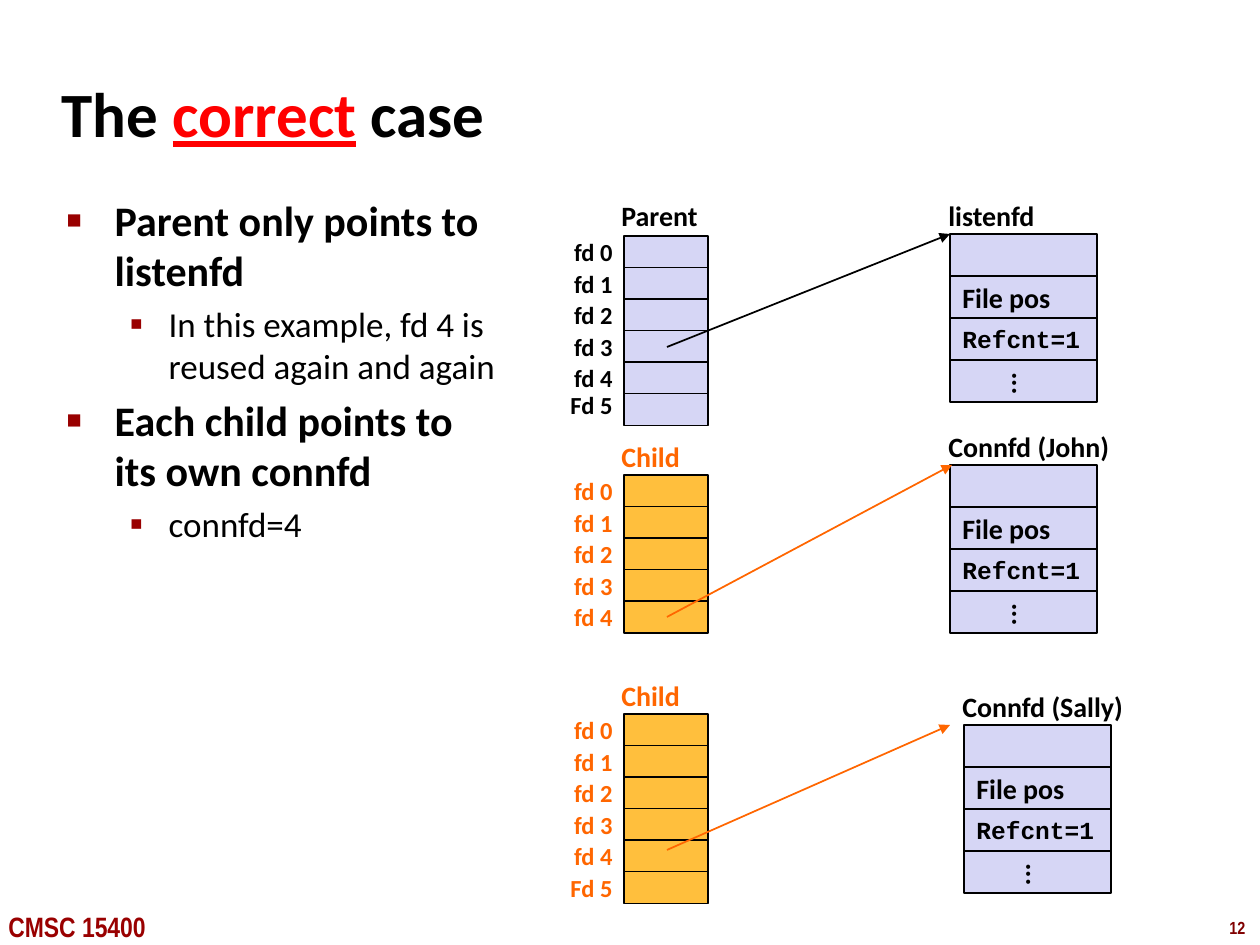
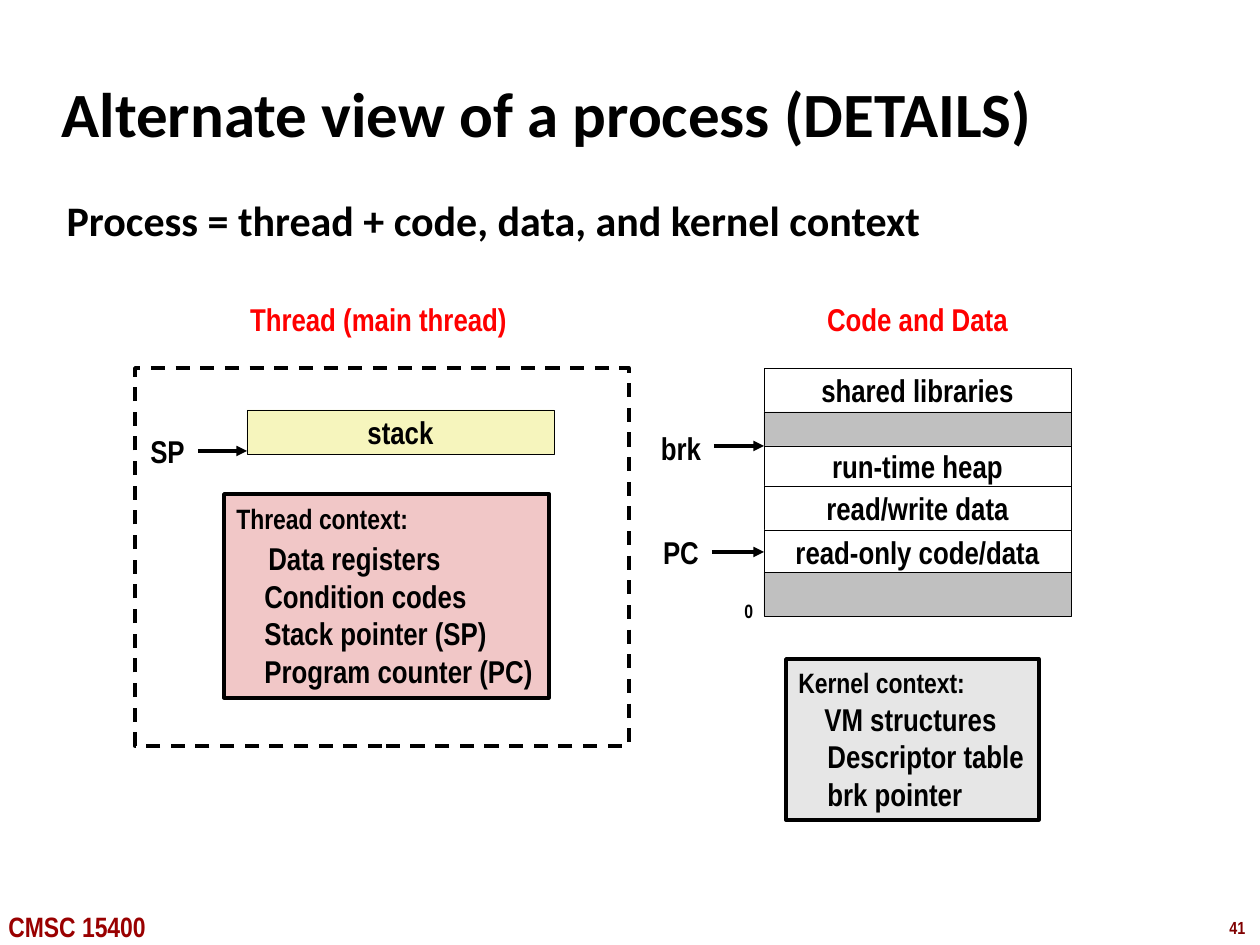
from lxml import etree
from pptx import Presentation
from pptx.dml.color import RGBColor
from pptx.enum.dml import MSO_LINE
from pptx.enum.shapes import MSO_CONNECTOR, MSO_SHAPE
from pptx.enum.text import MSO_ANCHOR, MSO_AUTO_SIZE, PP_ALIGN
from pptx.oxml.ns import qn
from pptx.util import Pt

LEFT, MID, RIGHT = PP_ALIGN.LEFT, PP_ALIGN.CENTER, PP_ALIGN.RIGHT
TOP, CENTER = MSO_ANCHOR.TOP, MSO_ANCHOR.MIDDLE
RECT, DASH = MSO_SHAPE.RECTANGLE, MSO_LINE.DASH
STRAIGHT, FIXED = MSO_CONNECTOR.STRAIGHT, MSO_AUTO_SIZE.NONE
PX = 914400 / 126
SANS, THIN, MONO = "Calibri", "Arial Narrow", "Courier New"
BLACK, RED, DARK, MAROON = "000000", "FF0000", "990000", "800000"
LILAC, AMBER, ORANGE = "D6D6F5", "FFBF3D", "FF6600"
WHITE, GRAY, CREAM, PINK, PALE = "FFFFFF", "C0C0C0", "F6F5BD", "F1C7C7", "E6E6E6"
paint = RGBColor.from_string


def box(slide, area, rows=(), font=SANS, color=BLACK, align=LEFT,
        anchor=CENTER, fill=None, width=0):
    spot = [round(n * PX) for n in area]
    if fill or width:
        shape = slide.shapes.add_shape(RECT, *spot)
        shape.shadow.inherit = False
        shape.line.color.rgb = paint(BLACK)
        shape.line.width = Pt(width)
        if fill:
            shape.fill.solid()
            shape.fill.fore_color.rgb = paint(fill)
        else:
            shape.fill.background()
    else:
        shape = slide.shapes.add_textbox(*spot)
    frame = shape.text_frame
    frame.word_wrap = False
    frame.vertical_anchor = anchor
    for i, (text, size, indent, gap) in enumerate(rows):
        para = frame.add_paragraph() if i else frame.paragraphs[0]
        para.alignment = align
        para.space_before = Pt(gap)
        para._p.get_or_add_pPr().set("marL", str(round(indent * PX)))
        run = para.add_run()
        run.text = text
        run.font.name, run.font.size, run.font.bold = font, Pt(size), True
        run.font.color.rgb = paint(color)
    return shape


def arrow(slide, start, end, color, width):
    link = slide.shapes.add_connector(STRAIGHT, *[round(n * PX) for n in (*start, *end)])
    link.line.color.rgb = paint(color)
    link.line.width = Pt(width)
    etree.SubElement(link.line._get_or_add_ln(), qn("a:tailEnd"), type="triangle")
    etree.SubElement(link._element.spPr, qn("a:effectLst"))
    return link


deck = Presentation()
deck.slide_width, deck.slide_height = round(1260 * PX), round(945 * PX)

pages = [
    ("12", [("The ", BLACK), ("correct", RED), (" case", BLACK)], 460, [
        ("Parent only points to listenfd", 0),
        ("In this example, fd 4 is reused again and again", 1),
        ("Each child points to its own connfd", 0),
        ("connfd=4", 1)]),
    ("41", [("Alternate view of a process (DETAILS)", BLACK)], 1089, [
        ("Process = thread + code, data, and kernel context", None)]),
]
styles = {0: (48, -48, "■", 60), 1: (102, -39, "▪", 110)}

slides = []
for number, title, wide, points in pages:
    slide = deck.slides.add_slide(deck.slide_layouts[1])
    slides.append(slide)
    box(slide, (1217, 911, 43, 34), [(number, 10, 0, 0)], THIN, MAROON, anchor=TOP)
    box(slide, (-4, 903, 179, 46), [("CMSC 15400", 16, 0, 0)], THIN, DARK, anchor=TOP)
    head, body = slide.placeholders
    for holder, area in ((head, (49, 60, 1046, 105)), (body, (54, 188, wide, 685))):
        holder.left, holder.top, holder.width, holder.height = [round(n * PX) for n in area]
        holder.text_frame.auto_size = FIXED
        holder.text_frame.word_wrap = True
    head.text_frame.vertical_anchor = CENTER
    para = head.text_frame.paragraphs[0]
    para.alignment = LEFT
    for text, color in title:
        run = para.add_run()
        run.text = text
        run.font.name, run.font.size, run.font.bold = SANS, Pt(36), True
        run.font.color.rgb = paint(color)
        if color == RED:
            run.font.underline = True
    for i, (text, level) in enumerate(points):
        para = body.text_frame.add_paragraph() if i else body.text_frame.paragraphs[0]
        para.level = level or 0
        if i == 0:
            para.space_before = Pt(0)
        props = para._p.get_or_add_pPr()
        left, hang, mark, scale = styles.get(level, (0, 0, None, 0))
        props.set("marL", str(round(left * PX)))
        props.set("indent", str(round(hang * PX)))
        if mark:
            tint = etree.SubElement(props, qn("a:buClr"))
            etree.SubElement(tint, qn("a:srgbClr"), val=DARK)
            etree.SubElement(props, qn("a:buSzPct"), val=str(scale * 1000))
            etree.SubElement(props, qn("a:buChar"), char=mark)
        else:
            etree.SubElement(props, qn("a:buNone"))
        run = para.add_run()
        run.text = text
        run.font.name, run.font.size = SANS, Pt(20 if level else 24)
        run.font.bold = not level
        run.font.color.rgb = paint(BLACK)

case, view = slides

files = [("listenfd", 950, 234), ("Connfd (John)", 950, 465), ("Connfd (Sally)", 964, 725)]
fields = [("", 16, SANS), ("File pos", 16, SANS), ("Refcnt=1", 14, MONO), ("...", 16, SANS)]
for name, x, y in files:
    box(case, (x - 14, y - 42, 189, 46), [(name, 16, 0, 0)])
    for i, (text, size, font) in enumerate(fields):
        rows = [(text, size, 0, 0)] if text else ()
        cell = box(case, (x, y + 42 * i, 147, 42), rows, font, fill=LILAC, width=1)
        if text == "...":
            cell.text_frame._txBody.bodyPr.set("vert", "eaVert")

names = ["fd 0", "fd 1", "fd 2", "fd 3", "fd 4", "Fd 5"]
tables = [
    ("Parent", 236, 192, 6, 5, LILAC, BLACK, (667, 347), (950, 234)),
    ("Child", 475, 433, 5, 0, AMBER, ORANGE, (667, 617), (952, 465)),
    ("Child", 714, 672, 6, 0, AMBER, ORANGE, (667, 850), (950, 725)),
]
for name, y, top, count, lift, fill, color, start, end in tables:
    box(case, (609, top, 120, 46), [(name, 16, 0, 0)], color=color)
    for i, label in enumerate(names[:count]):
        row = y + i * 63 / 2
        box(case, (624, row, 84, 32), fill=fill, width=1)
        shift = lift if i == 5 else 0
        box(case, (540, row - shift, 85, 32), [(label, 14, 0, 0)], color=color, align=RIGHT)
    arrow(case, start, end, color, 1)

parts = [
    ("shared libraries", 368, 44, WHITE), ("", 412, 34, GRAY),
    ("run-time heap", 446, 40, WHITE), ("read/write data", 486, 44, WHITE),
    ("read-only code/data", 530, 44, WHITE), ("", 572, 44, GRAY),
]
blocks = {}
for text, y, high, fill in parts:
    rows = [(text, 18, 0, 0)] if text else ()
    blocks[text] = box(view, (764, y, 307, high), rows, THIN, align=MID, fill=fill, width=0.25)
box(view, (247, 410, 307, 44), [("stack", 18, 0, 0)], THIN, align=MID, fill=CREAM, width=0.25)

box(view, (224, 494, 325, 204), [
    ("Thread context:", 16, 0, 0), ("Data registers", 18, 32, 2),
    ("Condition codes", 18, 28, 0), ("Stack pointer (SP)", 18, 28, 0),
    ("Program counter (PC)", 18, 28, 0)], THIN, fill=PINK, width=2)
box(view, (786, 659, 253, 161), [
    ("Kernel context:", 16, 0, 0), ("VM structures", 18, 26, 0),
    ("Descriptor table", 18, 29, 0), ("brk pointer", 18, 29, 0)], THIN, fill=PALE, width=2)

for text, x, wide in (("Thread (main thread)", 209, 339), ("Code and Data", 790, 255)):
    box(view, (x, 294, wide, 50), [(text, 18, 0, 0)], THIN, RED, MID)
box(view, (732, 593, 34, 37), [("0", 11, 0, 0)], THIN, anchor=TOP)

marks = [
    ("SP", (137, 426, 61, 50), (198, 451), (247, 451)),
    ("brk", (648, 423, 66, 50), (714, 446), (764, 446)),
    ("PC", (650, 527, 62, 50), (712, 552), (764, 552)),
]
for text, area, start, end in marks:
    label = box(view, area, [(text, 18, 0, 0)], THIN, align=MID)
    link = arrow(view, start, end, BLACK, 2)
    if text != "brk":
        link.begin_connect(label, 3)
    if text == "PC":
        link.end_connect(blocks["read-only code/data"], 1)

frame = box(view, (135, 368, 494, 378), width=2)
frame.line.dash_style = DASH

deck.save("out.pptx")
